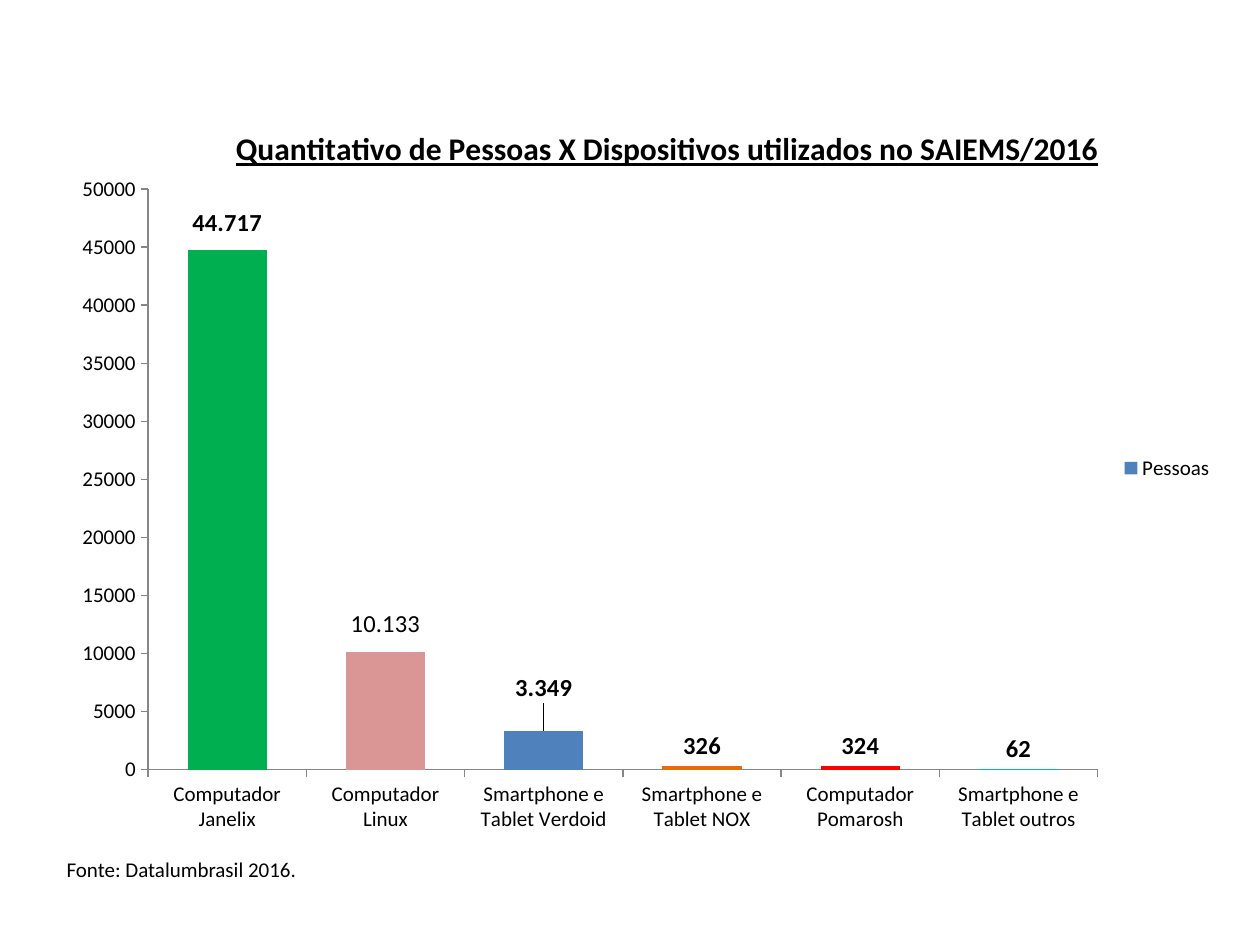
from lxml.etree import SubElement, Element
from pptx import Presentation
from pptx.chart.data import CategoryChartData as Data
from pptx.dml.color import RGBColor as Color
from pptx.enum.chart import XL_CHART_TYPE as Kind, XL_LABEL_POSITION as Spot
from pptx.enum.chart import XL_LEGEND_POSITION as Side, XL_TICK_MARK as Tick
from pptx.enum.shapes import MSO_SHAPE as Form
from pptx.enum.text import MSO_ANCHOR as Anchor
from pptx.oxml.ns import qn
from pptx.util import Pt

FONT = "Calibri"
BLACK = Color(0, 0, 0)
WHITE = Color(255, 255, 255)
GRAY = Color(0x86, 0x86, 0x86)
BLUE = Color(0x4F, 0x81, 0xBD)
GREEN = Color(0x00, 0xB0, 0x50)
PINK = Color(0xD9, 0x96, 0x94)
ORANGE = Color(0xE4, 0x6C, 0x0A)
RED = Color(0xFF, 0x00, 0x00)
CYAN = Color(0x00, 0xB0, 0xF0)

BARS = [
    ("Computador Janelix", 44717, GREEN),
    ("Computador Linux", 10133, PINK),
    ("Smartphone e Tablet Verdoid", 3349, BLUE),
    ("Smartphone e Tablet NOX", 326, ORANGE),
    ("Computador Pomarosh", 324, RED),
    ("Smartphone e Tablet outros", 62, CYAN),
]
LABELS = [
    ("44.717", True, 0, -0.01),
    ("10.133", False, 0, -0.01),
    ("3.349", True, 0, -0.03),
]


def style(font, size, bold=False):
    font.name = FONT
    font.size = Pt(size)
    font.bold = bold
    font.color.rgb = BLACK


def layout(owner, spot, **parts):
    for old in owner.findall(qn("c:layout")):
        owner.remove(old)
    node = Element(qn("c:layout"))
    owner.insert(spot, node)
    manual = SubElement(node, qn("c:manualLayout"))
    for name, val in parts.items():
        SubElement(manual, qn("c:" + name)).set("val", str(val))


def panel(slide, box):
    back = slide.shapes.add_shape(Form.RECTANGLE, *map(Pt, box))
    back.shadow.inherit = False
    back.fill.solid()
    back.fill.fore_color.rgb = WHITE
    back.line.fill.background()


def title(chart):
    frame = chart.chart_title.text_frame
    run = frame.paragraphs[0].add_run()
    run.text = "Quantitativo de Pessoas X Dispositivos utilizados no SAIEMS/2016"
    style(run.font, 18, True)
    run.font.underline = True
    head = chart.element.xpath("c:chart/c:title")[0]
    layout(head, 1, xMode="edge", yMode="edge", x=0.15, y=0.04)
    chart.chart_title.include_in_layout = False


def axes(chart):
    for axis in (chart.category_axis, chart.value_axis):
        axis.has_major_gridlines = False
        axis.major_tick_mark = Tick.OUTSIDE
        axis.minor_tick_mark = Tick.NONE
        axis.format.line.color.rgb = GRAY
        axis.format.line.width = Pt(0.75)
        style(axis.tick_labels.font, 12)
    scale = chart.value_axis
    scale.minimum_scale, scale.maximum_scale = 0, 50000
    scale.major_unit = 5000
    scale.tick_labels.number_format = "General"
    scale.tick_labels.number_format_is_linked = False


def bars(chart):
    plot = chart.plots[0]
    plot.gap_width = 100
    plot.vary_by_categories = False
    series = plot.series[0]
    series.invert_if_negative = False
    series.format.fill.solid()
    series.format.fill.fore_color.rgb = BLUE
    for i, (_, _, color) in enumerate(BARS):
        fill = series.points[i].format.fill
        fill.solid()
        fill.fore_color.rgb = color
    tags = series.data_labels
    tags.show_value = True
    tags.position = Spot.OUTSIDE_END
    style(tags.font, 14, True)
    for i, (text, bold, x, y) in enumerate(LABELS):
        tag = series.points[i].data_label
        run = tag.text_frame.paragraphs[0].add_run()
        run.text = text
        style(run.font, 14, bold)
        tag.position = Spot.OUTSIDE_END
        node = chart.element.xpath(f".//c:dLbl[c:idx/@val='{i}']")[0]
        layout(node, 1, x=x, y=y)


def graph(slide, box):
    data = Data()
    data.categories = [name for name, _, _ in BARS]
    data.add_series("Pessoas", [count for _, count, _ in BARS])
    kind = Kind.COLUMN_CLUSTERED
    chart = slide.shapes.add_chart(kind, *map(Pt, box), data).chart
    style(chart.font, 18)
    title(chart)
    axes(chart)
    bars(chart)
    area = chart.element.xpath("c:chart/c:plotArea")[0]
    layout(area, 0, layoutTarget="inner", xMode="edge", yMode="edge",
           x=0.08, y=0.13, w=0.81, h=0.77)
    chart.has_legend = True
    chart.legend.position = Side.RIGHT
    chart.legend.include_in_layout = False
    style(chart.legend.font, 12)


def source(slide, box):
    frame = slide.shapes.add_textbox(*map(Pt, box)).text_frame
    frame.word_wrap = True
    frame.vertical_anchor = Anchor.MIDDLE
    run = frame.paragraphs[0].add_run()
    run.text = "Fonte: Datalumbrasil 2016."
    style(run.font, 12)


def main():
    deck = Presentation()
    deck.slide_width, deck.slide_height = Pt(720), Pt(540)
    slide = deck.slides.add_slide(deck.slide_layouts[6])
    panel(slide, (0, 49, 720, 471))
    graph(slide, (31, 52, 670, 431))
    source(slide, (31, 479.5, 150, 34))
    deck.save("out.pptx")


if __name__ == "__main__":
    main()
